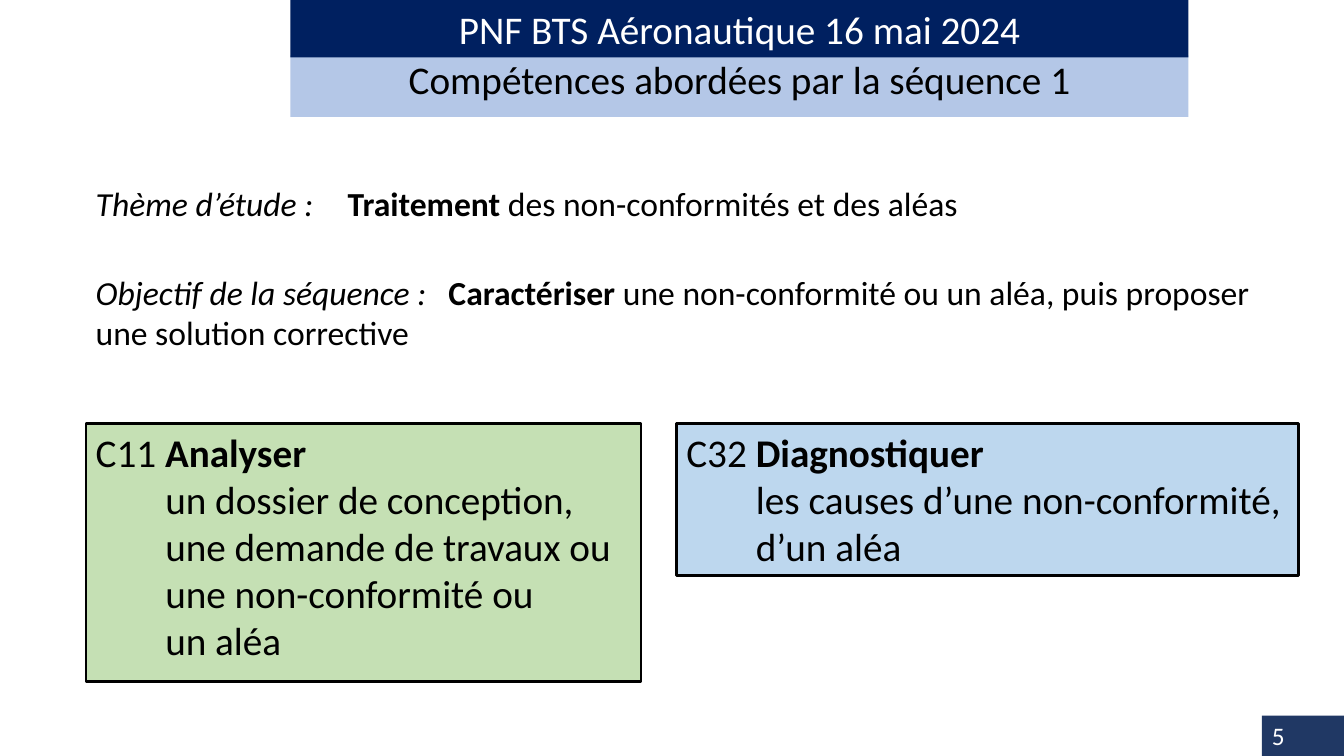
from dataclasses import dataclass
from typing import Optional

from lxml.etree import SubElement
from pptx import Presentation
from pptx.dml.color import RGBColor
from pptx.enum.shapes import MSO_SHAPE
from pptx.enum.text import MSO_ANCHOR, MSO_AUTO_SIZE, PP_ALIGN
from pptx.oxml.ns import qn
from pptx.util import Inches, Pt

BLACK = RGBColor(0x00, 0x00, 0x00)
WHITE = RGBColor(0xFF, 0xFF, 0xFF)
NAVY = RGBColor(0x00, 0x20, 0x60)
SLATE = RGBColor(0x20, 0x38, 0x64)
PERIWINKLE = RGBColor(0xB4, 0xC7, 0xE7)
GREEN = RGBColor(0xC5, 0xE0, 0xB4)
SKY = RGBColor(0xBD, 0xD7, 0xEE)

# The slide is a grid of 100 columns by 100 rows
SLIDE_WIDTH, SLIDE_HEIGHT = Inches(13.333), Inches(7.5)
COLUMN, ROW = SLIDE_WIDTH / 100, SLIDE_HEIGHT / 100
MARGIN, CARDS_TOP = 6.38, 56
BAND_LEFT, BAND_WIDTH = 21.6, 66.83
TEXT_WIDTH = 89.48
FRAME = {"word_wrap": True, "auto_size": MSO_AUTO_SIZE.NONE,
         "vertical_anchor": MSO_ANCHOR.TOP}


@dataclass
class Area:
    left: float
    top: float
    width: float
    height: float


@dataclass
class Piece:
    text: str
    bold: bool = False
    italic: bool = False


@dataclass
class Line:
    pieces: list[Piece]
    indent: float = 0
    tab: float = 0


@dataclass
class Box:
    area: Area
    lines: list[Line]
    size: int = 28
    color: RGBColor = BLACK
    fill: Optional[RGBColor] = None
    outlined: bool = False
    align: PP_ALIGN = PP_ALIGN.LEFT
    spacing: float = 1


def plain(text: str) -> list[Line]:
    return [Line([Piece(text)])]


def statement(label: str, verb: str, rest: str) -> list[Line]:
    """A label in italics, then a tab and the sentence with its bold verb."""
    return [Line([Piece(label + "\t", italic=True), Piece(verb, bold=True), Piece(rest)],
                 tab=4.02)]


def skill(code: str, verb: str, objects: list[str]) -> list[Line]:
    """A code and its verb above the indented objects."""
    heading = Line([Piece(code + " "), Piece(verb, bold=True)])
    return [heading] + [Line([Piece(text)], indent=0.69) for text in objects]


TITLE = Box(Area(BAND_LEFT, 0, BAND_WIDTH, 7.6), plain("PNF BTS Aéronautique 16 mai 2024"),
            color=WHITE, fill=NAVY, align=PP_ALIGN.CENTER)
SUBTITLE = Box(Area(BAND_LEFT, 7.33, BAND_WIDTH, 8.13),
               plain("Compétences abordées par la séquence 1"),
               fill=PERIWINKLE, align=PP_ALIGN.CENTER, spacing=0.9)
BOXES = [
    Box(Area(93.9, 94.67, 6.1, 5.33), plain("5"), size=18, color=WHITE, fill=SLATE),
    Box(Area(MARGIN, 23.47, TEXT_WIDTH, 6.67),
        statement("Thème d’étude :", "Traitement", " des non-conformités et des aléas"),
        size=24),
    Box(Area(MARGIN, 35.33, TEXT_WIDTH, 12.13),
        statement("Objectif de la séquence :", "Caractériser",
                  " une non-conformité ou un aléa, puis proposer une solution corrective"),
        size=24),
    Box(Area(MARGIN, CARDS_TOP, 41.33, 34.13),
        skill("C11", "Analyser", ["un dossier de conception,", "une demande de travaux ou",
                                  "une non-conformité ou", "un aléa"]),
        fill=GREEN, outlined=True),
    Box(Area(50.33, CARDS_TOP, 46.28, 20.13),
        skill("C32", "Diagnostiquer", ["les causes d’une non-conformité,", "d’un aléa"]),
        fill=SKY, outlined=True),
]


def write_line(paragraph, line: Line, box: Box) -> None:
    # Indent, no bullet, optional tab stop
    properties = paragraph._p.get_or_add_pPr()
    properties.set("marL", str(Inches(line.indent)))
    properties.set("indent", "0")
    SubElement(properties, qn("a:buNone"))
    if line.tab:
        tabs = SubElement(properties, qn("a:tabLst"))
        SubElement(tabs, qn("a:tab"), pos=str(Inches(line.tab)), algn="l")
    layout = {"alignment": box.align, "line_spacing": box.spacing,
              "space_before": Pt(0), "space_after": Pt(0)}
    for name, value in layout.items():
        setattr(paragraph, name, value)
    for piece in line.pieces:
        run = paragraph.add_run()
        run.text = piece.text
        font = {"name": "Calibri", "size": Pt(box.size),
                "bold": piece.bold, "italic": piece.italic}
        for name, value in font.items():
            setattr(run.font, name, value)
        run.font.color.rgb = box.color


def format_box(shape, box: Box) -> None:
    area = box.area
    place = {"left": area.left * COLUMN, "top": area.top * ROW,
             "width": area.width * COLUMN, "height": area.height * ROW}
    for name, value in place.items():
        setattr(shape, name, round(value))
    if box.fill is not None:
        shape.fill.solid()
        shape.fill.fore_color.rgb = box.fill
    if box.outlined:
        shape.line.color.rgb = BLACK
        shape.line.width = Pt(1.75)
    else:
        shape.line.fill.background()
    frame = shape.text_frame
    for name, value in FRAME.items():
        setattr(frame, name, value)
    for index, line in enumerate(box.lines):
        paragraph = frame.add_paragraph() if index else frame.paragraphs[0]
        write_line(paragraph, line, box)


def add_box(slide, box: Box) -> None:
    if box.fill is None:
        shape = slide.shapes.add_textbox(0, 0, 0, 0)
    else:
        shape = slide.shapes.add_shape(MSO_SHAPE.RECTANGLE, 0, 0, 0, 0)
        shape.shadow.inherit = False
    format_box(shape, box)


def main() -> None:
    presentation = Presentation()
    presentation.slide_width, presentation.slide_height = SLIDE_WIDTH, SLIDE_HEIGHT
    slide = presentation.slides.add_slide(presentation.slide_layouts[1])

    # Header bands, the title lying over the subtitle
    title = slide.shapes.title
    format_box(title, TITLE)
    format_box(slide.placeholders[1], SUBTITLE)
    slide.shapes.element.append(title.element)

    # Page number, statements and skill cards
    for box in BOXES:
        add_box(slide, box)

    presentation.save("out.pptx")


if __name__ == "__main__":
    main()
